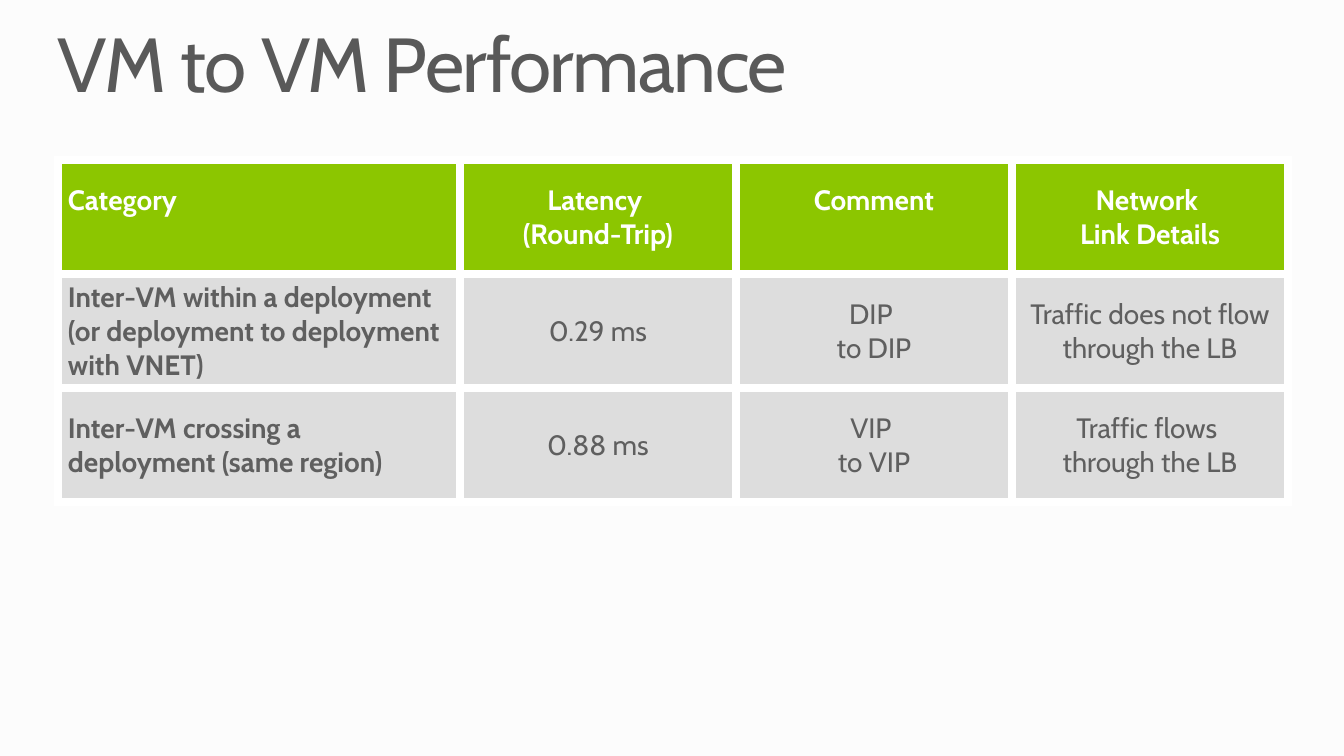
from copy import deepcopy
from dataclasses import dataclass

from lxml import etree
from pptx import Presentation, util as u
from pptx.dml.color import RGBColor
from pptx.enum import text
from pptx.oxml.ns import qn

SCALE = 914400 / 134.4
FONT = "Cabin"
LEFT, WIDTH = 58, 1230
COLUMNS = [402, 276, 276, 276]
ROW_HEIGHT = 114
MARGINS = {"margin_left": 10, "margin_right": 10, "margin_top": 5, "margin_bottom": 5}
HEADER_LINE = 34


@dataclass
class RowStyle:
    fill: str
    color: str
    bold: bool


HEADER = RowStyle("8CC600", "FFFFFF", True)
BODY = RowStyle("DDDDDD", "5F5F5F", False)

ROWS = [
    (HEADER, ["Category", "Latency \v(Round-Trip)", "Comment", "Network \vLink Details"]),
    (BODY, ["Inter-VM within a deployment (or deployment to deployment with VNET)",
            "0.29 ms", "DIP \vto DIP", "Traffic does not flow through the LB"]),
    (BODY, ["Inter-VM crossing a deployment (same region)",
            "0.88 ms", "VIP \vto VIP", "Traffic flows \vthrough the LB"]),
]


def px(n: int) -> int:
    return round(n * SCALE)


def rgb(value: str) -> RGBColor:
    return RGBColor.from_string(value)


def set_all(target, values: dict) -> None:
    for name, value in values.items():
        setattr(target, name, value)


def format_runs(p, size: int, color: str, bold: bool) -> None:
    for r in p.runs:
        set_all(r.font, {"name": FONT, "size": u.Pt(size), "bold": bold})
        r.font.color.rgb = rgb(color)
    for br in p._p.findall(qn("a:br")):
        br.append(deepcopy(p.runs[0].font._element))


def add_borders(cell, color: str, width: float) -> None:
    tc_pr = cell._tc.get_or_add_tcPr()
    for side in ("lnL", "lnR", "lnT", "lnB"):
        ln = etree.SubElement(tc_pr, qn(f"a:{side}"), w=str(u.Pt(width)))
        fill = etree.SubElement(ln, qn("a:solidFill"))
        etree.SubElement(fill, qn("a:srgbClr"), val=color)


def draw_cell(cell, content: str, style: RowStyle, first: bool) -> None:
    add_borders(cell, "FFFFFF", 4.5)
    cell.fill.solid()
    cell.fill.fore_color.rgb = rgb(style.fill)
    set_all(cell, {name: px(n) for name, n in MARGINS.items()})
    cell.vertical_anchor = text.MSO_ANCHOR.MIDDLE
    if style is HEADER and "\v" not in content:
        cell.margin_bottom = px(MARGINS["margin_bottom"] + HEADER_LINE)
    p = cell.text_frame.paragraphs[0]
    p.text = content
    p.alignment = text.PP_ALIGN.LEFT if first else text.PP_ALIGN.CENTER
    format_runs(p, 15, style.color, style.bold or first)


def draw_table(slide) -> None:
    frame = slide.shapes.add_table(len(ROWS), len(COLUMNS), px(LEFT), px(160),
                                   px(WIDTH), px(ROW_HEIGHT * len(ROWS)))
    table = frame.table
    set_all(table, {"first_row": False, "horz_banding": False})
    for column, width in zip(table.columns, COLUMNS):
        column.width = px(width)
    for i, (style, contents) in enumerate(ROWS):
        table.rows[i].height = px(ROW_HEIGHT)
        for j, content in enumerate(contents):
            draw_cell(table.cell(i, j), content, style, j == 0)


def draw_title(slide, content: str) -> None:
    sp = slide.shapes.title
    set_all(sp, {"left": px(LEFT), "top": px(26), "width": px(WIDTH), "height": px(83)})
    tf = sp.text_frame
    set_all(tf, {name: 0 for name in MARGINS})
    set_all(tf, {"word_wrap": True, "vertical_anchor": text.MSO_ANCHOR.TOP,
                 "auto_size": text.MSO_AUTO_SIZE.SHAPE_TO_FIT_TEXT})
    p = tf.paragraphs[0]
    p.text = content
    set_all(p, {"alignment": text.PP_ALIGN.LEFT, "line_spacing": 0.9})
    format_runs(p, 41, "595959", False)
    p.runs[0].font._element.set("spc", "-80")


def main() -> None:
    prs = Presentation()
    set_all(prs, {"slide_width": px(1344), "slide_height": px(756)})
    slide = prs.slides.add_slide(prs.slide_layouts[5])
    slide.background.fill.solid()
    slide.background.fill.fore_color.rgb = rgb("FCFCFC")
    draw_title(slide, "VM to VM Performance")
    draw_table(slide)
    prs.save("out.pptx")


if __name__ == "__main__":
    main()
